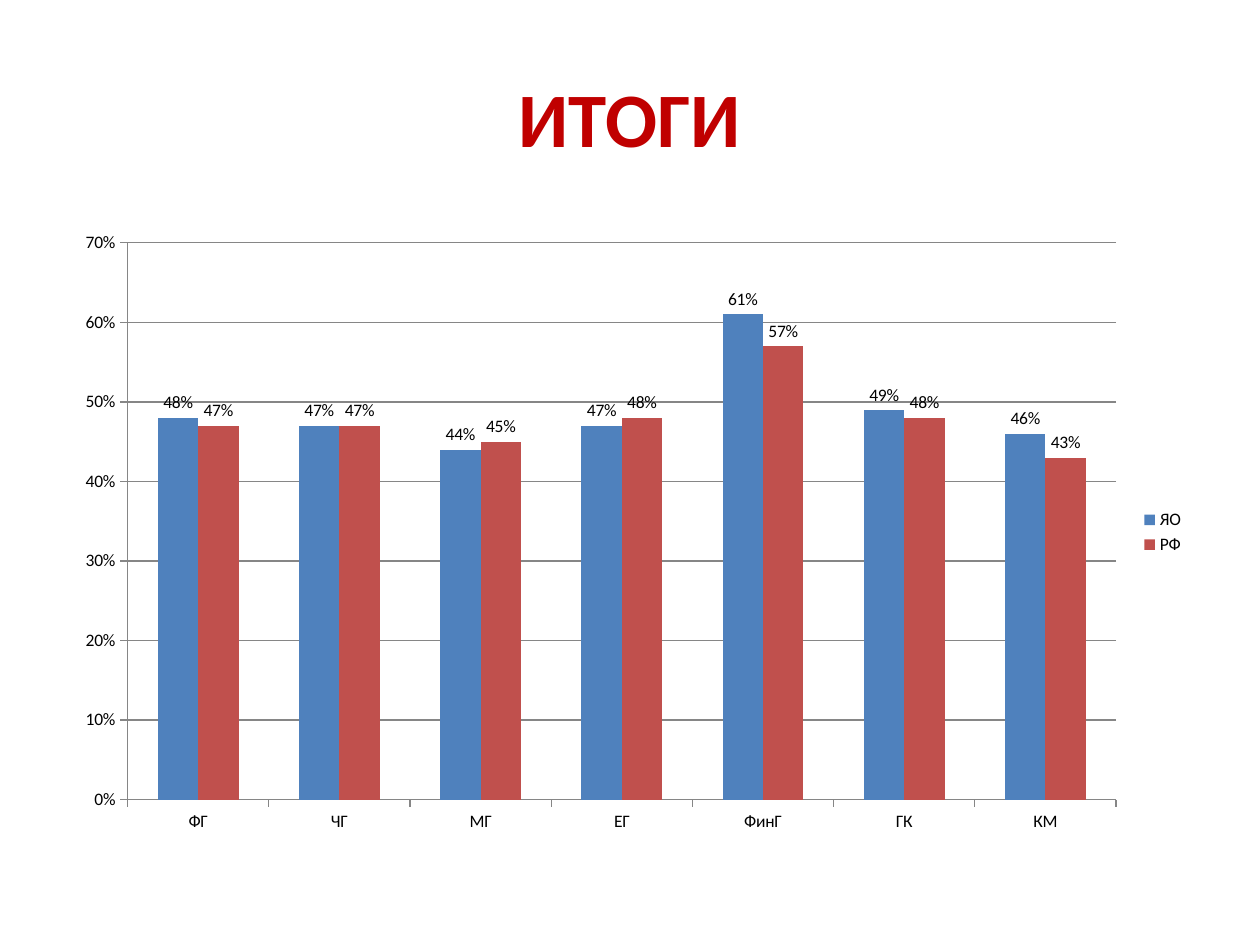
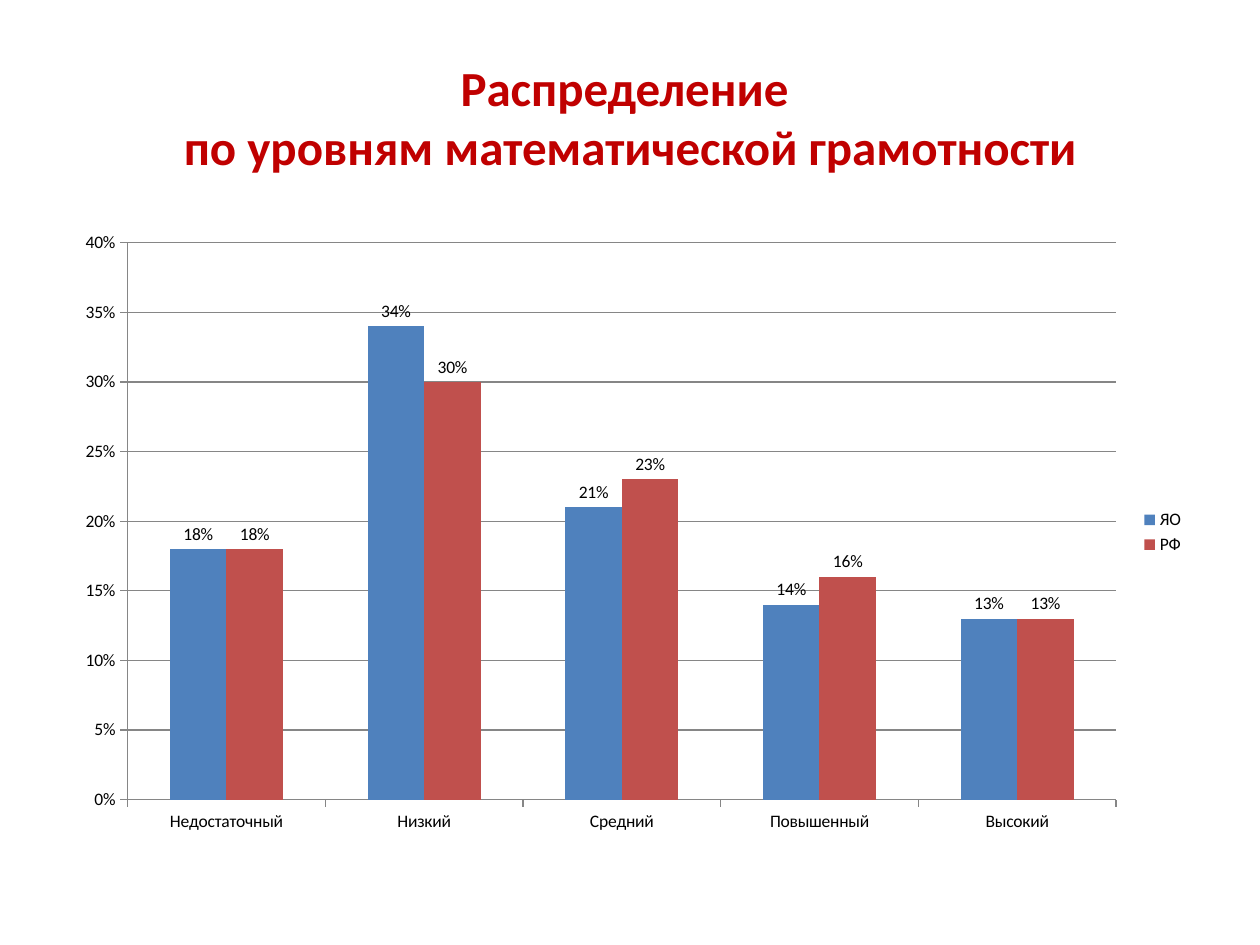
from dataclasses import dataclass

from pptx import Presentation
from pptx.chart.data import CategoryChartData
from pptx.dml.color import RGBColor
from pptx.enum.chart import XL_CHART_TYPE as ChartType
from pptx.enum.chart import XL_LABEL_POSITION as LabelPosition
from pptx.enum.chart import XL_LEGEND_POSITION as LegendPosition
from pptx.enum.chart import XL_TICK_MARK as TickMark
from pptx.enum.text import MSO_ANCHOR as Anchor
from pptx.enum.text import PP_ALIGN as Align
from pptx.util import Inches, Pt


@dataclass(frozen=True)
class Theme:
    font: str = "Calibri"
    title_color: str = "C00000"
    text_color: str = "000000"
    line_color: str = "868686"
    series_colors: tuple = ("4F81BD", "C0504D")
    large_title: int = 44
    small_title: int = 28
    chart_text: int = 10
    line_width: float = 0.75


THEME = Theme()
TITLE_BOX = [Inches(n) for n in (0.5, 0.3, 9, 1.25)]
CHART_BOX = [Inches(n) for n in (0.5, 1.75, 9, 4.95)]
PERCENT = "0%"
TITLE_ONLY = 5


def format_font(font, size, color, bold=False):
    font.name = THEME.font
    font.size = Pt(size)
    font.bold = bold
    font.color.rgb = RGBColor.from_string(color)


def write_text(box, text, *, size, color, bold=False, align=Align.CENTER):
    """Fill a shape with one paragraph; a vertical tab breaks the line."""
    frame = box.text_frame
    frame.word_wrap = True
    frame.vertical_anchor = Anchor.MIDDLE
    para = frame.paragraphs[0]
    para.text = text
    para.alignment = align
    for span in para.runs:
        format_font(span.font, size, color, bold)


def add_titled_slide(deck, title, size):
    page = deck.slides.add_slide(deck.slide_layouts[TITLE_ONLY])
    box = page.shapes.title
    box.left, box.top, box.width, box.height = TITLE_BOX
    write_text(box, title, size=size, color=THEME.title_color, bold=True)
    return page


def format_line(line):
    line.width = Pt(THEME.line_width)
    line.color.rgb = RGBColor.from_string(THEME.line_color)


def format_axes(chart, maximum, step):
    values = chart.value_axis
    values.minimum_scale, values.maximum_scale = 0, maximum
    values.major_unit = step
    values.has_major_gridlines = True
    format_line(values.major_gridlines.format.line)
    values.tick_labels.number_format = PERCENT
    values.tick_labels.number_format_is_linked = False
    for axis in (values, chart.category_axis):
        axis.major_tick_mark = TickMark.OUTSIDE
        axis.minor_tick_mark = TickMark.NONE
        format_line(axis.format.line)


def format_series(series, color):
    series.format.fill.solid()
    series.format.fill.fore_color.rgb = RGBColor.from_string(color)
    labels = series.data_labels
    labels.show_value = True
    labels.number_format = PERCENT
    labels.number_format_is_linked = False
    labels.position = LabelPosition.OUTSIDE_END


def add_share_chart(page, categories, shares, maximum, step):
    """Draw clustered columns of percentages, one series per region."""
    data = CategoryChartData(number_format=PERCENT)
    data.categories = categories
    for region, percents in shares.items():
        data.add_series(region, [percent / 100 for percent in percents])
    chart = page.shapes.add_chart(
        ChartType.COLUMN_CLUSTERED, *CHART_BOX, data).chart
    chart.has_title = False
    format_font(chart.font, THEME.chart_text, THEME.text_color)
    chart.has_legend = True
    chart.legend.position = LegendPosition.RIGHT
    chart.legend.include_in_layout = False
    plot = chart.plots[0]
    plot.gap_width = 150
    plot.overlap = 0
    plot.vary_by_categories = False
    for series, color in zip(plot.series, THEME.series_colors):
        format_series(series, color)
    format_axes(chart, maximum, step)


def main():
    deck = Presentation()
    deck.slide_width, deck.slide_height = Inches(10), Inches(7.5)

    results = add_titled_slide(deck, "ИТОГИ", THEME.large_title)
    add_share_chart(
        results,
        ["ФГ", "ЧГ", "МГ", "ЕГ", "ФинГ", "ГК", "КМ"],
        {"ЯО": [48, 47, 44, 47, 61, 49, 46],
         "РФ": [47, 47, 45, 48, 57, 48, 43]},
        maximum=0.7, step=0.1)

    levels = add_titled_slide(
        deck, "Распределение \vпо уровням математической грамотности",
        THEME.small_title)
    add_share_chart(
        levels,
        ["Недостаточный", "Низкий", "Средний", "Повышенный", "Высокий"],
        {"ЯО": [18, 34, 21, 14, 13],
         "РФ": [18, 30, 23, 16, 13]},
        maximum=0.4, step=0.05)

    deck.save("out.pptx")


if __name__ == "__main__":
    main()
